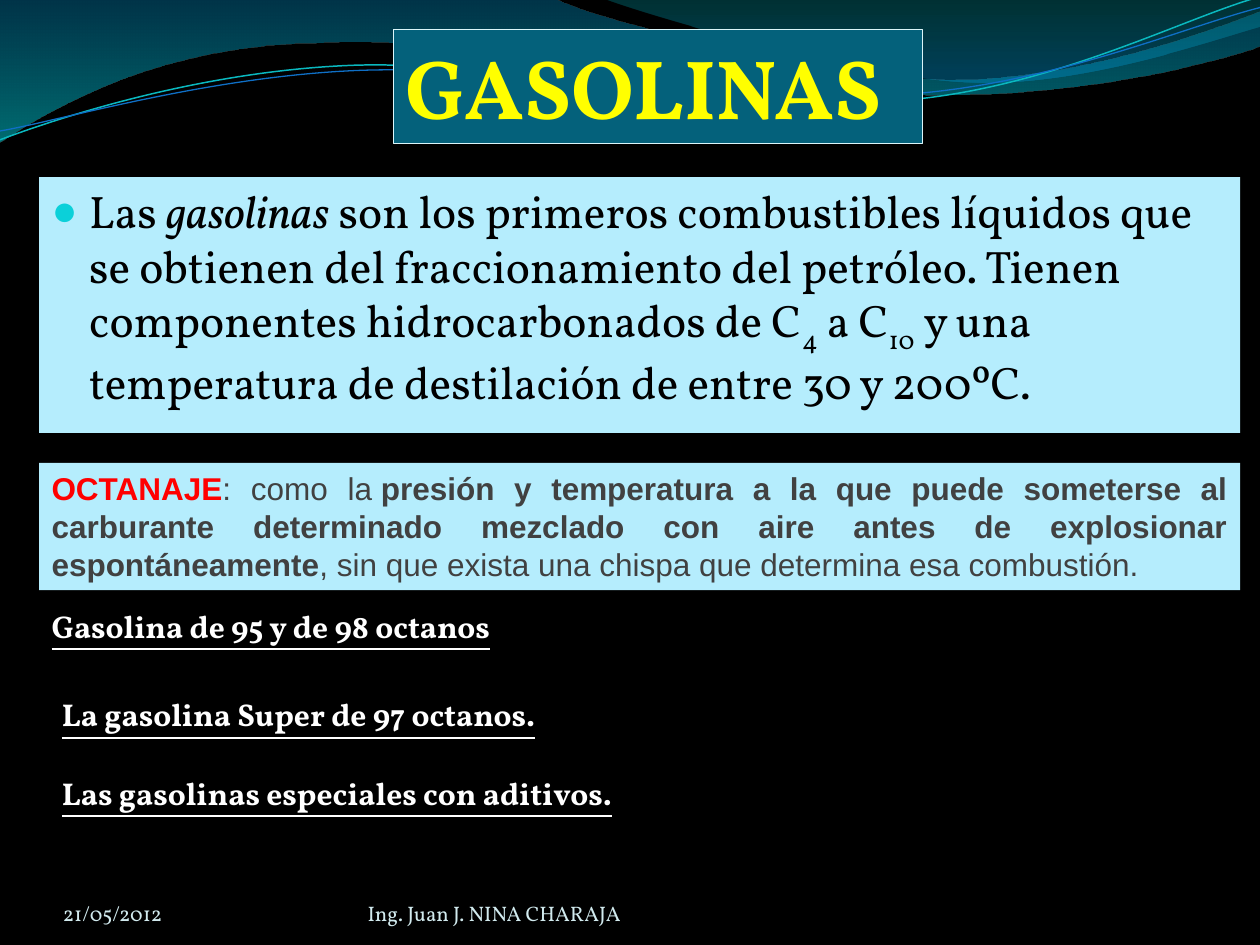
"""Build the slide about gasolines and their octane rating."""
from lxml.etree import SubElement
from pptx import Presentation
from pptx.dml.color import RGBColor
from pptx.enum.shapes import MSO_SHAPE
from pptx.enum.text import MSO_ANCHOR, PP_ALIGN
from pptx.oxml.ns import qn
from pptx.util import Cm, Pt

COLORS = {
    "black": "000000", "white": "FFFFFF", "yellow": "FFFF00", "red": "FF0000",
    "gray": "414141", "panel": "B5EDFD", "title": "04617B", "border": "DBF5F9",
    "footer": "D1EAEE", "bullet": "0BD0D9", "aqua": "0AB8BF", "blue": "0F6FC6",
    "wave_blue": "0074A1", "wave_aqua": "00C6CF", "crest_aqua": "00A1A9", "crest_blue": "008BBF",
}
RGB = {name: RGBColor.from_string(value) for name, value in COLORS.items()}
NBSP = chr(160)

prs = Presentation()
prs.slide_width, prs.slide_height = Cm(25.4), Cm(19.05)
s = prs.slides.add_slide(prs.slide_layouts[6])
s.background.fill.solid()
s.background.fill.fore_color.rgb = RGB["black"]


def add_curve(start, segments, close):
    """Draw a freeform through line ends and cubic curves given in inches."""
    numbers = [Cm(2.54 * n) for seg in [start, *segments] for n in seg]
    points = list(zip(numbers[::2], numbers[1::2]))
    fb = s.shapes.build_freeform(*points[0])
    fb.add_line_segments(points[1:], close=close)
    sp = fb.convert_to_shape()
    sp.shadow.inherit = False
    lines = iter(list(sp.element.iter(qn("a:lnTo"))))
    for seg in segments:
        first = next(lines)
        if len(seg) == 6:
            first.tag = qn("a:cubicBezTo")
            for _ in range(2):
                other = next(lines)
                first.append(other[0])
                other.getparent().remove(other)
    return sp


def add_runs(p, runs, size, font):
    """Append runs of (text, color, attributes) to a paragraph."""
    for text, color, attrs in runs:
        r = p.add_run()
        r.text = text
        r.font.size, r.font.name = Pt(size), font
        r.font.color.rgb = RGB[color]
        for name, value in attrs.items():
            setattr(r.font, name, value)


waves = [
    ((0, -0.01),
     [(4.4, -0.01), (4.76, 0.17, 6.64, 0.63, 7.58, 0.63), (8.53, 0.63, 9.58, 0.26, 10, 0.09),
      (10.01, 0.36), (9.83, 0.44, 8.7, 0.76, 7.46, 0.75), (6.22, 0.75, 3.82, 0.28, 2.57, 0.34),
      (1.29, 0.35, 0.46, 0.83, -0.01, 1.13), (0, -0.01)],
     [(0, "wave_blue", 45), (1, "wave_aqua", 55)]),
    ((4.79, -0.01),
     [(5.09, 0.11, 6.82, 0.62, 7.69, 0.65), (8.56, 0.69, 9.61, 0.32, 10, 0.21), (10, 0),
      (4.79, -0.01)],
     [(0, "crest_aqua", 30), (0.8, "crest_blue", 45)]),
]
for start, segments, stops in waves:
    sp = add_curve(start, segments, True)
    sp.line.fill.background()
    sp.fill.gradient()
    sp.fill.gradient_angle = 270
    for stop, (position, color, _) in zip(sp.fill.gradient_stops, stops):
        stop.position = position
        stop.color.rgb = RGB[color]
    colors = sp.element.spPr.find(qn("a:gradFill")).iter(qn("a:srgbClr"))
    for clr, (_, _, opacity) in zip(colors, stops):
        SubElement(clr, qn("a:alpha")).set("val", str(opacity * 1000))

strands = [
    ((0, 1.11), [(0.48, 0.93, 1.58, 0.57, 2.77, 0.52), (3.95, 0.47, 5.93, 0.89, 7.13, 0.8),
                 (8.33, 0.71, 9.38, 0.15, 9.98, -0.02)], "aqua", 0.85),
    ((0, 1.04), [(0.47, 0.96, 1.64, 0.61, 2.83, 0.56), (4.03, 0.51, 5.97, 0.83, 7.17, 0.75),
                 (8.36, 0.67, 9.41, 0.21, 10, 0.06)], "blue", 0.75),
]
for start, segments, color, width in strands:
    sp = add_curve(start, segments, False)
    sp.fill.background()
    sp.line.color.rgb = RGB[color]
    sp.line.width = Pt(width)

definition = [
    (f"Las{NBSP}", "black", {}),
    ("gasolinas", "black", {"italic": True}),
    (f"{NBSP}son los primeros combustibles líquidos que se obtienen del fraccionamiento del "
     "petróleo. Tienen componentes hidrocarbonados de C", "black", {}),
    ("4", "black", {}),
    (f"{NBSP}a C", "black", {}),
    ("10", "black", {}),
    (f"{NBSP}y una temperatura de destilación de entre 30 y 200ºC.", "black", {}),
]
octane = [
    ("OCTANAJE", "red", {"bold": True}),
    (f": como la{NBSP}", "gray", {}),
    ("presión y temperatura a la que puede someterse al carburante determinado mezclado con aire "
     "antes de explosionar espontáneamente", "gray", {"bold": True}),
    (", sin que exista una chispa que determina esa combustión.", "gray", {}),
]
title = [("GASOLINAS", "yellow", {"bold": True})]
boxes = [
    (0.79, 3.57, 24.21, 5.16, "panel", None, definition, 26, "Vollkorn", PP_ALIGN.LEFT),
    (7.93, 0.59, 10.67, 2.31, "title", "border", title, 48, "Vollkorn", PP_ALIGN.LEFT),
    (0.79, 9.33, 24.21, 2.57, "panel", None, octane, 18, "Arial", PP_ALIGN.JUSTIFY),
]
paragraphs = []
for x, y, w, h, fill, line, runs, size, font, align in boxes:
    sp = s.shapes.add_shape(MSO_SHAPE.RECTANGLE, Cm(x), Cm(y), Cm(w), Cm(h))
    sp.shadow.inherit = False
    sp.fill.solid()
    sp.fill.fore_color.rgb = RGB[fill]
    if line:
        sp.line.color.rgb = RGB[line]
        sp.line.width = Pt(0.75)
    else:
        sp.line.fill.background()
    tf = sp.text_frame
    tf.word_wrap = True
    tf.vertical_anchor = MSO_ANCHOR.TOP
    p = tf.paragraphs[0]
    p.alignment = align
    add_runs(p, runs, size, font)
    paragraphs.append(p)

p = paragraphs[0]
p.space_before = Pt(5)
for r in p.runs:
    if r.text.isdigit():
        r._r.get_or_add_rPr().set("baseline", "-25000")
pPr = p._p.get_or_add_pPr()
pPr.set("marL", str(Cm(0.76)))
pPr.set("indent", str(Cm(-0.76)))
SubElement(SubElement(pPr, qn("a:buClr")), qn("a:srgbClr")).set("val", COLORS["bullet"])
SubElement(pPr, qn("a:buSzPct")).set("val", "95000")
SubElement(pPr, qn("a:buFont")).set("typeface", "Arial")
SubElement(pPr, qn("a:buChar")).set("char", "●")

heading = {"bold": True, "underline": True}
labels = [
    (1.27, 17.65, 5.92, "21/05/2012", 12, "footer", {}),
    (7.41, 17.65, 9.32, "Ing. Juan J. NINA CHARAJA", 12, "footer", {}),
    (0.79, 12.11, 10.03, "Gasolina de 95 y de 98 octanos", 18, "white", heading),
    (1, 13.89, 10.67, "La gasolina Super de 97 octanos.", 18, "white", heading),
    (1, 15.47, 12.27, "Las gasolinas especiales con aditivos.", 18, "white", heading),
]
for x, y, w, text, size, color, attrs in labels:
    tf = s.shapes.add_textbox(Cm(x), Cm(y), Cm(w), Cm(1.02)).text_frame
    tf.word_wrap = False
    if color == "footer":
        tf.word_wrap = True
        tf.vertical_anchor = MSO_ANCHOR.BOTTOM
        tf.margin_left = tf.margin_right = tf.margin_top = tf.margin_bottom = 0
    add_runs(tf.paragraphs[0], [(text, color, attrs)], size, "Vollkorn")

prs.save("out.pptx")
